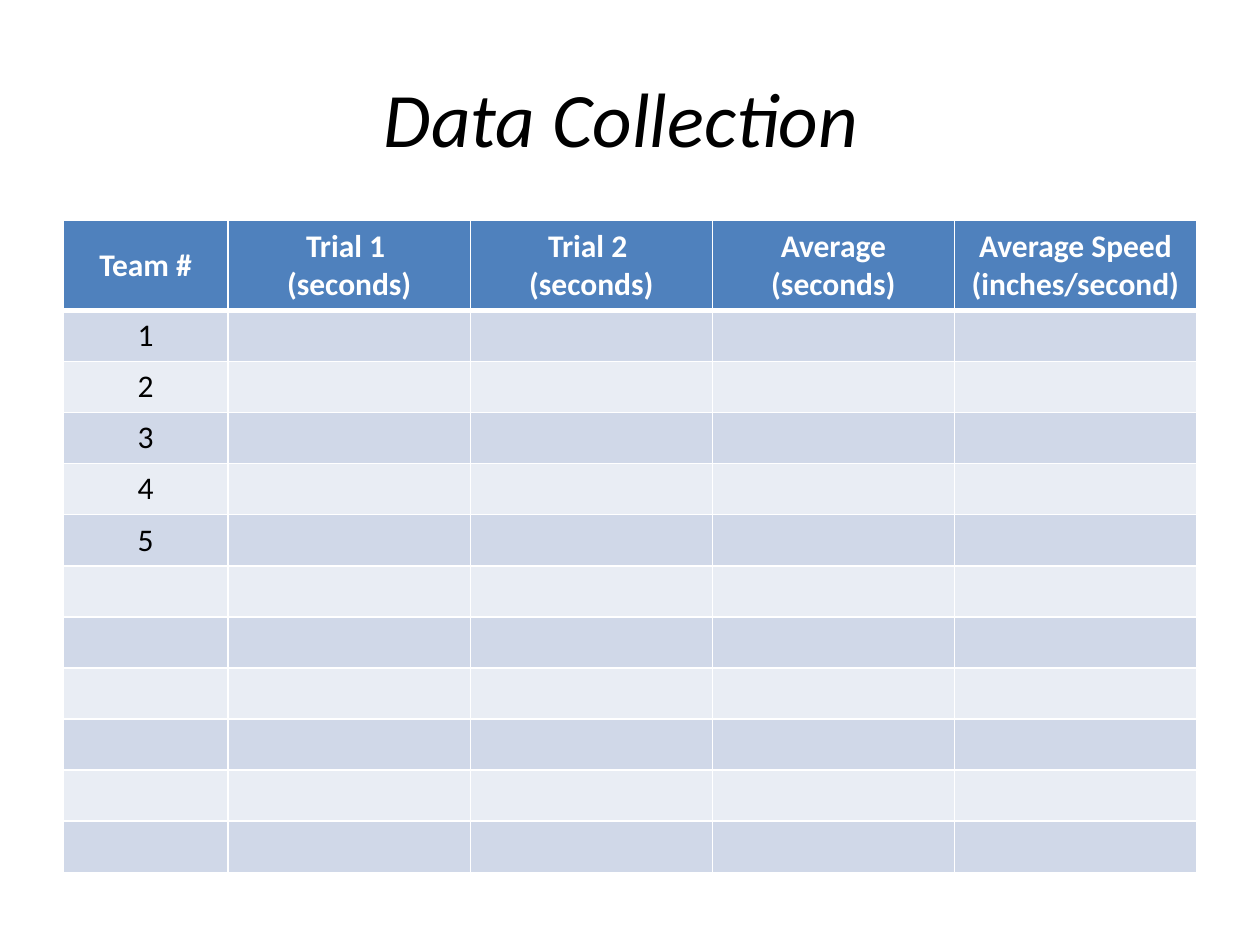
from lxml import etree
from pptx import Presentation
from pptx.dml.color import RGBColor
from pptx.enum.text import MSO_ANCHOR, PP_ALIGN
from pptx.oxml.ns import qn
from pptx.util import Cm, Pt

CENTER = PP_ALIGN.CENTER
MIDDLE = MSO_ANCHOR.MIDDLE

COLORS = {
    "text": "000000",
    "header": "4F81BD",
    "odd": "D0D8E8",
    "even": "E9EDF4",
    "white": "FFFFFF",
}
TITLE_FORMAT = {"name": "Calibri", "size": Pt(44), "italic": True}
HEADER_FORMAT = {"name": "Calibri", "size": Pt(18), "bold": True}
BODY_FORMAT = {"name": "Calibri", "size": Pt(18), "bold": False}


def write_text(frame, text, font_format, color):
    frame.text = text
    frame.vertical_anchor = MIDDLE
    for para in frame.paragraphs:
        para.alignment = CENTER
        for span in para.runs:
            for name, value in font_format.items():
                setattr(span.font, name, value)
            span.font.color.rgb = RGBColor.from_string(COLORS[color])


def add_border(cell, side, points):
    line = etree.SubElement(cell._tc.get_or_add_tcPr(), qn(f"a:ln{side}"), w=str(Pt(points)))
    fill = etree.SubElement(line, qn("a:solidFill"))
    etree.SubElement(fill, qn("a:srgbClr"), val=COLORS["white"])


deck = Presentation()
deck.slide_width, deck.slide_height = Cm(25.4), Cm(19.05)
page = deck.slides.add_slide(deck.slide_layouts[5])

# Title
title = page.shapes.title
title.left, title.top, title.width, title.height = Cm(1.27), Cm(0.76), Cm(22.86), Cm(3.18)
write_text(title.text_frame, "Data Collection ", TITLE_FORMAT, "text")

# Table contents: a header, five numbered teams and spare rows
headers = [
    "Team #",
    "Trial 1 \n(seconds)",
    "Trial 2 \n(seconds)",
    "Average\n(seconds)",
    "Average Speed\n(inches/second)",
]
team_count = 5
row_count = 12

# Table grid; the two-line header grows to fit its text
table = page.shapes.add_table(
    row_count, len(headers), Cm(1.27), Cm(4.45), Cm(22.85), Cm(12.36)
).table
for index, column in enumerate(table.columns):
    column.width = Cm(3.33) if index == 0 else Cm(4.88)
for row in table.rows:
    row.height = Cm(1.03)

# Cells
for row_index, row in enumerate(table.rows):
    for column_index, cell in enumerate(row.cells):
        if row_index == 0:
            write_text(cell.text_frame, headers[column_index], HEADER_FORMAT, "white")
        elif column_index == 0 and row_index <= team_count:
            write_text(cell.text_frame, str(row_index), BODY_FORMAT, "text")
        cell.vertical_anchor = MIDDLE

        for side in "LRTB":
            under_header = (row_index, side) in [(0, "B"), (1, "T")]
            add_border(cell, side, 3 if under_header else 1)

        band = "header" if row_index == 0 else "odd" if row_index % 2 else "even"
        cell.fill.solid()
        cell.fill.fore_color.rgb = RGBColor.from_string(COLORS[band])

deck.save("out.pptx")
